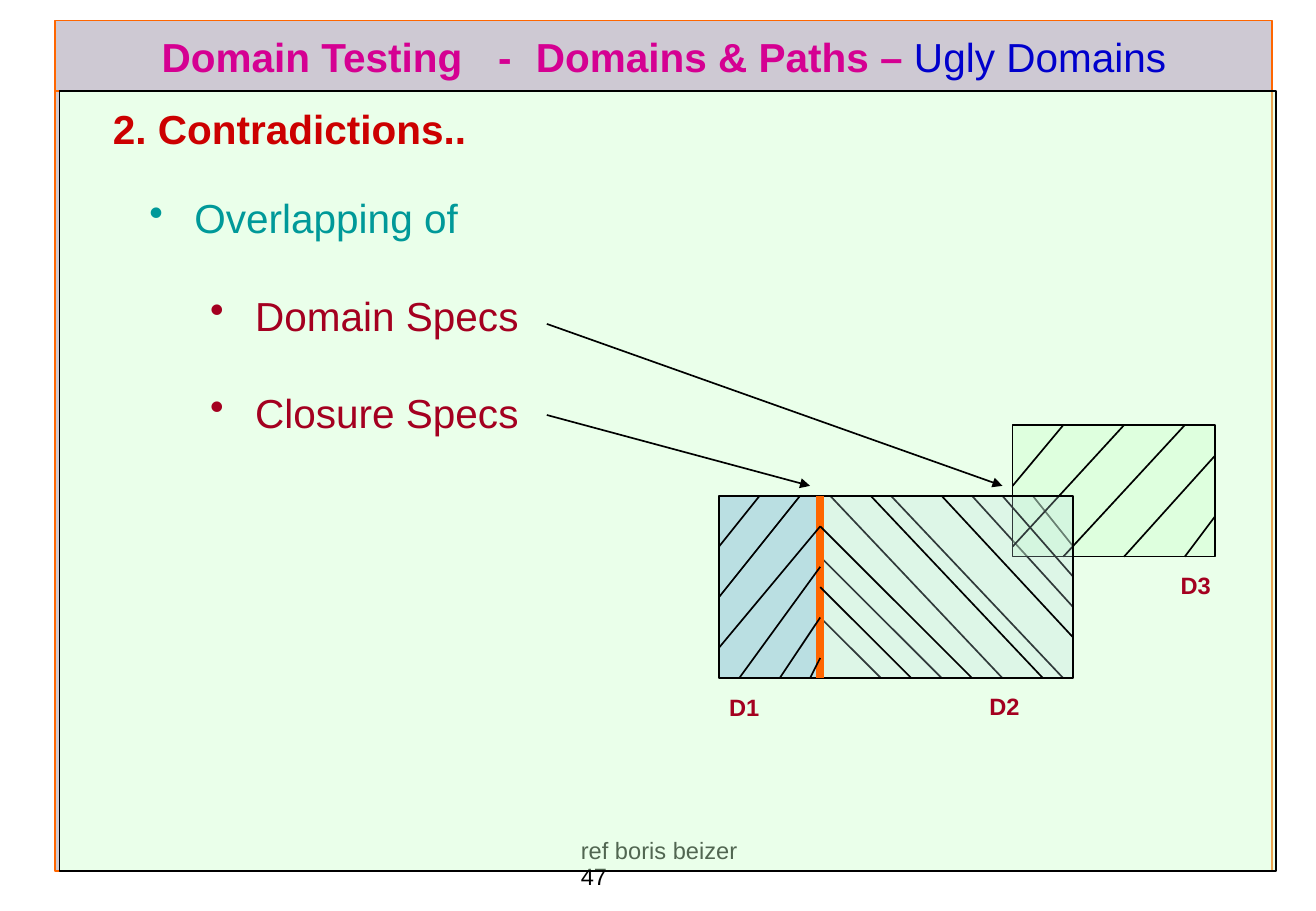
import pptx
import pptx.util
import pptx.dml.color
import pptx.enum.shapes
import pptx.enum.text
import pptx.oxml

Inches, Pt = pptx.util.Inches, pptx.util.Pt
RGBColor = pptx.dml.color.RGBColor

BLACK = RGBColor(0x00, 0x00, 0x00)
ORANGE = RGBColor(0xFF, 0x66, 0x00)
GREY = RGBColor(0xCE, 0xC9, 0xD3)
MINT = RGBColor(0xCC, 0xFF, 0xCC)
AQUA = RGBColor(0xBA, 0xDF, 0xE2)
MAGENTA = RGBColor(0xD5, 0x00, 0x92)
BLUE = RGBColor(0x00, 0x00, 0xCC)
RED = RGBColor(0xCC, 0x00, 0x00)
TEAL = RGBColor(0x00, 0x99, 0x99)
CRIMSON = RGBColor(0xA4, 0x00, 0x20)

CELL = 1 / 12  # the diagram's grid, in inches
TITLE_BOX = (0.45, 0.17, 10.02, 0.58)
FRAME_BOX = (0.45, 0.75, 10.02, 6.42)
PANEL_BOX = (0.49, 0.75, 10.01, 6.42)
OUTLINE_BOX = (0.91, 0.86, 4.2, 2.9)
FOOTER_BOX = (4.78, 6.9, 2, 0.44)
DIAGRAM_ORIGIN = (71, 42)  # grid column and row

# Hatch lines from (column, row) to (column, row) within each domain
D1_HATCH = [(0, 10, 8, 0), (0, 15, 10, 3), (2, 18, 10, 7),
            (6, 18, 10, 12), (0, 5, 4, 0), (9, 18, 10, 16)]
D2_BACK_HATCH = [(0, 6, 12, 18), (0, 12, 6, 18), (1, 0, 18, 18),
                 (7, 0, 24, 18), (15, 0, 25, 11), (21, 0, 25, 5)]
D2_OVERLAP_HATCH = [(18, 0, 25, 8)]
D2_FRONT_HATCH = [(0, 3, 15, 18), (12, 0, 25, 14), (5, 0, 22, 18), (0, 9, 9, 18)]
D3_HATCH = [(5, 0, 0, 6), (11, 0, 0, 12), (17, 0, 5, 13),
            (20, 3, 11, 13), (20, 9, 17, 13)]


def add_xml(parent, markup):
    """Append a DrawingML element, written as its tag and attributes."""
    ns = 'xmlns:a="http://schemas.openxmlformats.org/drawingml/2006/main"'
    parent.append(pptx.oxml.parse_xml(f"<a:{markup[0]} {ns} {markup[1]}"))


def add_rect(slide, box, fill=None, opacity=100, line=None, weight=1):
    rect = slide.shapes.add_shape(pptx.enum.shapes.MSO_SHAPE.RECTANGLE, *map(Inches, box))
    rect.shadow.inherit = False
    if fill is None:
        rect.fill.background()
    else:
        rect.fill.solid()
        rect.fill.fore_color.rgb = fill
        if opacity < 100:
            colour = rect.fill._xPr.solidFill.srgbClr
            add_xml(colour, ("alpha", f'val="{opacity * 1000}"/>'))
    if line is None:
        rect.line.fill.background()
    else:
        rect.line.color.rgb = line
        rect.line.width = Pt(weight)
    return rect


def add_line(slide, origin, ends, colour=BLACK, weight=1, arrow=False):
    """Draw a line between grid points counted from origin."""
    points = [Inches((origin[i % 2] + end) * CELL) for i, end in enumerate(ends)]
    line = slide.shapes.add_connector(pptx.enum.shapes.MSO_CONNECTOR.STRAIGHT, *points)
    line.line.color.rgb = colour
    line.line.width = Pt(weight)
    if arrow:
        add_xml(line.line._get_or_add_ln(), ("tailEnd", 'type="triangle"/>'))
    add_xml(line._element.spPr, ("effectLst", "/>"))
    return line


def add_hatch(slide, origin, hatch):
    return [add_line(slide, origin, ends) for ends in hatch]


def add_run(paragraph, text, size, colour, bold=False):
    run = paragraph.add_run()
    run.text = text
    run.font.name = "Arial"
    run.font.size = Pt(size)
    run.font.bold = bold
    run.font.color.rgb = colour


def clear_frame(frame, left=0):
    frame.word_wrap = True
    frame.auto_size = pptx.enum.text.MSO_AUTO_SIZE.NONE
    frame.margin_left = Inches(left)
    frame.margin_top = frame.margin_right = frame.margin_bottom = 0
    return frame


def add_text(slide, box):
    return clear_frame(slide.shapes.add_textbox(*map(Inches, box)).text_frame)


def draw_title(slide, box):
    title = slide.shapes.title
    title.left, title.top, title.width, title.height = map(Inches, box)
    title.fill.solid()
    title.fill.fore_color.rgb = GREY
    title.line.color.rgb = ORANGE
    title.line.width = Pt(1)
    heading = clear_frame(title.text_frame, left=0.88)
    heading.vertical_anchor = pptx.enum.text.MSO_ANCHOR.MIDDLE
    words = heading.paragraphs[0]
    words.alignment = pptx.enum.text.PP_ALIGN.LEFT
    stops = "".join(f'<a:tab pos="{Inches(stop)}" algn="l"/>' for stop in (2.77, 3.08))
    add_xml(words._p.get_or_add_pPr(), ("tabLst", f">{stops}</a:tabLst>"))
    add_run(words, "Domain Testing\t-\tDomains & Paths – ", 24, MAGENTA, True)
    add_run(words, "Ugly Domains", 24, BLUE)


def draw_footer(slide, box):
    footer = add_text(slide, box)
    for i, text in enumerate(("ref boris beizer", "47")):
        line = footer.paragraphs[0] if i == 0 else footer.add_paragraph()
        line.line_spacing = Pt(15.4)
        add_run(line, text, 14, BLACK)


def draw_panel(slide, frame_box, panel_box):
    left, top, _, height = frame_box
    add_rect(slide, (left, top, panel_box[0] - left, height), GREY)
    add_rect(slide, frame_box, line=ORANGE)
    add_rect(slide, panel_box, MINT, 40, BLACK)


def draw_outline(slide, box):
    number = ("buAutoNum", 'type="arabicPeriod" startAt="2"/>')
    bullet = ("buChar", 'char="•"/>')
    points = [("Contradictions..", RED, True, 0, 0.39, 1, number),
              ("Overlapping of", TEAL, False, 1, 0.69, 24, bullet),
              ("Domain Specs", CRIMSON, False, 2, 1.19, 28.8, bullet),
              ("Closure Specs", CRIMSON, False, 2, 1.19, 28.8, bullet)]
    outline = add_text(slide, box)
    for i, (text, colour, bold, level, indent, before, marker) in enumerate(points):
        point = outline.paragraphs[0] if i == 0 else outline.add_paragraph()
        point.level = level
        point.space_before = Pt(before)
        settings = point._p.get_or_add_pPr()
        settings.set("marL", str(Inches(indent)))
        settings.set("indent", str(Inches(-0.37)))
        add_xml(settings, marker)
        add_run(point, text, 24, colour, bold)


def draw_domains(slide, origin):
    column, row = origin
    d1, d2, d3 = (column, row + 7), (column + 10, row + 7), (column + 29, row)

    def add_domain(corner, columns, rows, *style):
        box = [n * CELL for n in (*corner, columns, rows)]
        return add_rect(slide, box, *style)

    # Domains and their hatching, back to front
    add_hatch(slide, d2, D2_BACK_HATCH)
    add_domain(d3, 20, 13, MINT, 38, BLACK)
    add_hatch(slide, d3, D3_HATCH)
    add_hatch(slide, d2, D2_OVERLAP_HATCH)
    middle_domain = add_domain(d2, 25, 18, AQUA, 26, BLACK, 1.25)
    add_domain(d1, 10, 18, AQUA, 100, BLACK)
    add_line(slide, d2, (0, 0, 0, 18), ORANGE, 5)  # shared boundary
    add_hatch(slide, d1, D1_HATCH)
    add_hatch(slide, d2, D2_FRONT_HATCH)[-1].begin_connect(middle_domain, 1)

    # Labels
    for name, across, down in (("D1", 1, 26.5), ("D2", 26.7, 26.4), ("D3", 45.6, 14.4)):
        place = ((column + across) * CELL, (row + down) * CELL, 0.4, 0.26)
        add_run(add_text(slide, place).paragraphs[0], name, 14, CRIMSON, True)

    # Arrows from the outline to the overlaps
    for ends in ((-17, -1, 9, 6), (-17, -10, 28, 6)):
        add_line(slide, origin, ends, arrow=True)


def main():
    deck = pptx.Presentation()
    deck.slide_width, deck.slide_height = Inches(10.83), Inches(7.5)
    slide = deck.slides.add_slide(deck.slide_layouts[5])
    draw_title(slide, TITLE_BOX)
    draw_footer(slide, FOOTER_BOX)
    draw_panel(slide, FRAME_BOX, PANEL_BOX)
    draw_outline(slide, OUTLINE_BOX)
    draw_domains(slide, DIAGRAM_ORIGIN)
    deck.save("out.pptx")


if __name__ == "__main__":
    main()
